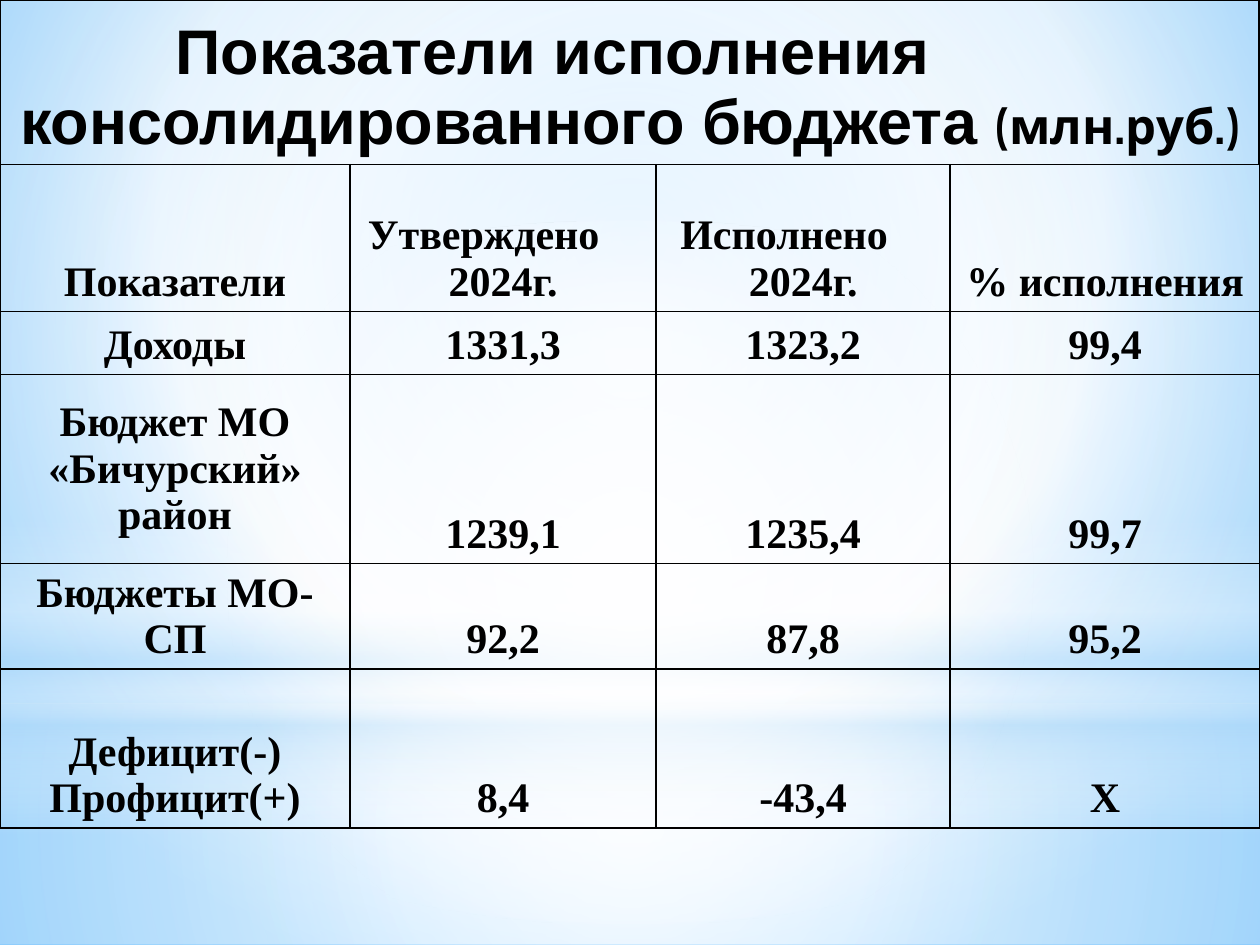
from lxml import etree
from pptx import Presentation, util as u
from pptx.dml.color import RGBColor
from pptx.enum import shapes, text
from pptx.oxml import ns

Pt = u.Pt
BLACK = "000000"
SKY = "B4DCFA"
WHITE = "FFFFFF"
CENTER = (50, 50, 50, 50)
COLS = (200, 175, 168, 177)
ROWS = (94, 84, 36, 108, 60, 91)
DATA = (
    (("Показатели",), ("Утверждено", "2024г."), ("Исполнено", "2024г."), ("% исполнения",)),
    (("Доходы",), ("1331,3",), ("1323,2",), ("99,4",)),
    (("Бюджет МО «Бичурский» район",), ("1239,1",), ("1235,4",), ("99,7",)),
    (("Бюджеты МО-СП",), ("92,2",), ("87,8",), ("95,2",)),
    (("Дефицит(-)", "Профицит(+)"), ("8,4",), ("-43,4",), ("Х",)),
)
INDENTS = {"Утверждено": 3, "Исполнено": 6.6}


def rgb(color):
    return RGBColor.from_string(color)


def sub(parent, tag, **attrs):
    el = etree.SubElement(parent, ns.qn(tag))
    for key, value in attrs.items():
        el.set(key, str(value))
    return el


def set_gradient(pr, stops, to=None, angle=0):
    solid = pr.find(ns.qn("a:solidFill"))
    grad = etree.Element(ns.qn("a:gradFill"), rotWithShape="1")
    pr.replace(solid, grad)
    gs_list = sub(grad, "a:gsLst")
    for pos, color, opacity in stops:
        gs = sub(gs_list, "a:gs", pos=pos * 1000)
        clr = sub(gs, "a:srgbClr", val=color)
        if opacity < 100:
            sub(clr, "a:alpha", val=opacity * 1000)
    if to:
        path = sub(grad, "a:path", path="circle")
        sub(path, "a:fillToRect", **{side: v * 1000 for side, v in zip("ltrb", to)})
    else:
        sub(grad, "a:lin", ang=angle * 60000, scaled=0)


def add_glow(s, kind, box, stops, to=None, angle=0):
    sp = s.shapes.add_shape(kind, *map(Pt, box))
    sp.shadow.inherit = False
    sp.line.fill.background()
    sp.fill.solid()
    set_gradient(sp.element.spPr, stops, to, angle)


def add_backdrop(s, left, top, width, height):
    s.background.fill.solid()
    set_gradient(s.element.find(".//" + ns.qn("p:bgPr")),
                 ((0, "9ED5FF", 100), (60, WHITE, 100), (100, "5BB9FF", 100)),
                 (20, 10, 20, 60))
    rect, oval = shapes.MSO_SHAPE.RECTANGLE, shapes.MSO_SHAPE.OVAL
    upper = 402
    add_glow(s, rect, (left, top + upper, width, height - upper),
             ((0, WHITE, 91), (37, WHITE, 76), (100, SKY, 79)), CENTER)
    add_glow(s, rect, (left, top, width, upper),
             ((0, WHITE, 89), (48, WHITE, 62), (100, SKY, 79)), CENTER)
    add_glow(s, rect, (left, top + 297, width, 180),
             ((0, WHITE, 0), (29, WHITE, 30), (45, SKY, 40),
              (55, WHITE, 26), (65, SKY, 60), (100, WHITE, 0)), angle=90)
    add_glow(s, oval, (left, top + 126, width, upper),
             ((0, WHITE, 100), (56, WHITE, 0)), CENTER)


def style_cell(cell, anchor=text.MSO_ANCHOR.BOTTOM, right=1):
    cell.vertical_anchor = anchor
    tc_pr = cell._tc.get_or_add_tcPr()
    for side, width in (("L", 1), ("R", right), ("T", 1), ("B", 1)):
        ln = sub(tc_pr, "a:ln" + side, w=Pt(width))
        sub(sub(ln, "a:solidFill"), "a:srgbClr", val=BLACK)
    cell.fill.background()


def style_run(r, font, size):
    r.font.name = font
    r.font.size = Pt(size)
    r.font.bold = True
    r.font.color.rgb = rgb(BLACK)


def align(p, indent=None):
    p.alignment = text.PP_ALIGN.CENTER
    if indent is not None:
        p.alignment = text.PP_ALIGN.LEFT
        p._p.get_or_add_pPr().set("marL", str(Pt(indent)))


def fill_title(cell):
    tf = cell.text_frame
    tf.text = "Показатели исполнения\nконсолидированного бюджета "
    first, second = tf.paragraphs
    align(first, 93)
    align(second)
    for p in tf.paragraphs:
        style_run(p.runs[0], "Arial", 36)
    r = second.add_run()
    r.text = "(млн.руб.)"
    style_run(r, "Cabin", 28)
    style_cell(cell, right=2.25)


def add_budget_table(s, left, top, width, height):
    frame = s.shapes.add_table(len(ROWS), len(COLS), *map(Pt, (left, top, width, height)))
    table = frame.table
    table.first_row = table.horz_banding = False
    for col, w in zip(table.columns, COLS):
        col.width = Pt(w)
    for row, h in zip(table.rows, ROWS):
        row.height = Pt(h)
    table.cell(0, 0).merge(table.cell(0, len(COLS) - 1))
    fill_title(table.cell(0, 0))
    for i, row in enumerate(DATA, 1):
        for j, lines in enumerate(row):
            cell = table.cell(i, j)
            cell.text_frame.text = "\n".join(lines)
            for p in cell.text_frame.paragraphs:
                align(p, INDENTS.get(p.text))
                style_run(p.runs[0], "Times New Roman", 24)
            middle = j == 0 and i in (3, 4)
            style_cell(cell, text.MSO_ANCHOR.MIDDLE if middle else text.MSO_ANCHOR.BOTTOM)


def main():
    prs = Presentation()
    prs.slide_width, prs.slide_height = Pt(720), Pt(540)
    s = prs.slides.add_slide(prs.slide_layouts[6])
    add_backdrop(s, 0, 0, 720, 540)
    add_budget_table(s, 0, 0, sum(COLS), sum(ROWS))
    prs.save("out.pptx")


if __name__ == "__main__":
    main()
